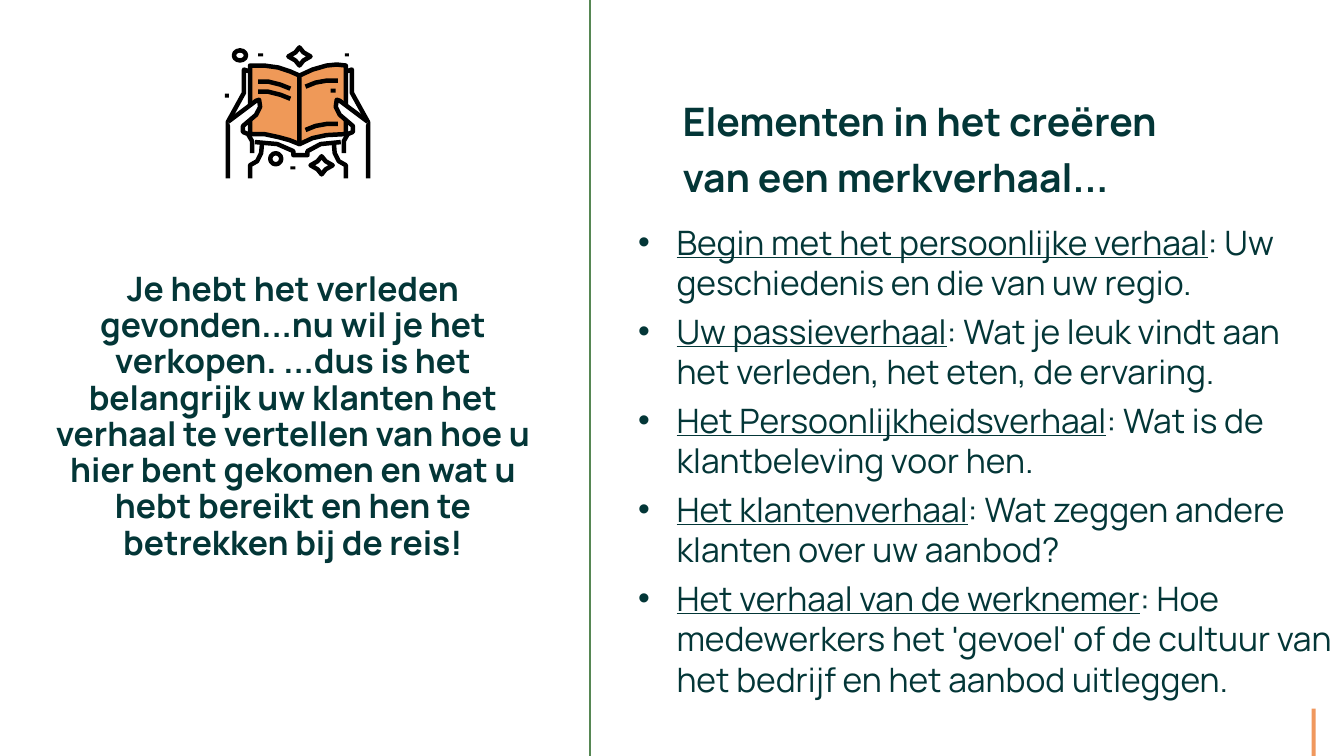
"""Build a slide on the elements of a brand story, laid out on a grid of 1333 columns by 750 rows."""
from dataclasses import dataclass
from typing import NamedTuple

from lxml import etree
from pptx import Presentation
from pptx.dml.color import RGBColor
from pptx.enum.shapes import MSO_CONNECTOR, MSO_SHAPE
from pptx.enum.text import MSO_ANCHOR, MSO_AUTO_SIZE, PP_ALIGN
from pptx.oxml.ns import qn
from pptx.util import Emu, Pt

CELL = 9144
COLS, ROWS = 1333, 750
RECT, OVAL = MSO_SHAPE.RECTANGLE, MSO_SHAPE.OVAL
STRAIGHT = MSO_CONNECTOR.STRAIGHT
TOP, NO_FIT = MSO_ANCHOR.TOP, MSO_AUTO_SIZE.NONE
LEFT, CENTER = PP_ALIGN.LEFT, PP_ALIGN.CENTER


@dataclass(frozen=True)
class Theme:
    """Hold the colours, font and sizes of the slide."""
    ink: str = "033637"
    rule: str = "568754"
    accent: str = "F0985E"
    page: str = "EF9958"
    black: str = "000000"
    white: str = "FFFFFF"
    font: str = "Manrope"
    head: int = 28
    body: int = 24
    gap: int = 6
    hair: int = 1
    pen: float = 3.2


class Box(NamedTuple):
    """Give a place in columns and rows."""
    x: float
    y: float
    w: float
    h: float


class Stroke(NamedTuple):
    """Describe one outline of the icon."""
    dots: tuple
    fill: str = ""
    shut: bool = False


class Story(NamedTuple):
    """Pair an underlined term with its text."""
    term: str
    text: str


THEME = Theme()
TITLE = "Elementen in het creëren van een merkverhaal..."
PITCH = ("Je hebt het verleden gevonden...nu wil je het verkopen. ...dus is het belangrijk "
         "uw klanten het verhaal te vertellen van hoe u hier bent gekomen en wat u hebt "
         "bereikt en hen te betrekken bij de reis!")
STORIES = (
    Story("Begin met het persoonlijke verhaal", ": Uw geschiedenis en die van uw regio."),
    Story("Uw passieverhaal", ": Wat je leuk vindt aan het verleden, het eten, de ervaring."),
    Story("Het Persoonlijkheidsverhaal", ": Wat is de klantbeleving voor hen."),
    Story("Het klantenverhaal", ": Wat zeggen andere klanten over uw aanbod?"),
    Story("Het verhaal van de werknemer", ": Hoe medewerkers het 'gevoel' of de cultuur "
          "van het bedrijf en het aanbod uitleggen."),
)

PAGES = (
    ((297, 75), (288, 71), (276, 67), (262, 65), (248, 65),
     (248, 133), (262, 133), (276, 136), (287, 139), (297, 143)),
    ((297, 75), (310, 69), (324, 65), (334, 64), (343, 65),
     (343, 133), (324, 134), (310, 137), (297, 143)),
)
SPINE = ((253, 141), (275, 143), (291, 150), (291, 154), (305, 154),
         (305, 150), (318, 143), (338, 141))
ARM = ((226, 177), (226, 121), (242, 92), (242, 69), (248, 71))
HAND = ((226, 121), (254, 100), (257, 99), (258, 106), (254, 114), (241, 125),
        (241, 131), (246, 133), (250, 140), (250, 152))
WRIST = ((248, 177), (248, 164), (255, 160), (259, 152), (260, 141))
TEXTS = (
    (((256, 81), (266, 81), (278, 84), (288, 88)), 10),
    (((303, 86), (313, 82), (324, 80), (335, 80)), 43),
)
STAR = ((-11, 0), (-4, -4), (0, -9), (4, -4), (11, 0), (4, 4), (0, 9), (-4, 4))
STARS = ((297, 56), (319, 164))
RINGS = (Box(232, 50, 12, 10), Box(268, 152, 11, 11))
SPECKS = (Box(256, 53, 5, 3), Box(328, 88, 5, 4), Box(342, 53, 4, 3),
          Box(223, 93, 4, 4), Box(288, 165, 5, 3))


def paint(shape, fill: str, line: str = "") -> None:
    """Set the fill and line of a shape, where an empty colour means none."""
    shape.shadow.inherit = False
    if fill:
        shape.fill.solid()
        shape.fill.fore_color.rgb = RGBColor.from_string(fill)
    else:
        shape.fill.background()
    if line:
        shape.line.color.rgb = RGBColor.from_string(line)
        shape.line.width = Pt(THEME.pen)
    else:
        shape.line.fill.background()


def scale(box: Box) -> list[Emu]:
    """Turn a grid box into slide lengths."""
    return [Emu(int(n * CELL)) for n in box]


def flip(dots: tuple) -> tuple:
    """Mirror points about the middle of the icon."""
    return tuple((591 - x, y) for x, y in dots)


def shift(dots: tuple, dx: int, dy: int) -> tuple:
    """Move points over the grid."""
    return tuple((x + dx, y + dy) for x, y in dots)


def draw(shapes, stroke: Stroke) -> None:
    """Draw one outline of the icon."""
    path = shapes.build_freeform(*stroke.dots[0], scale=CELL)
    path.add_line_segments(stroke.dots[1:], close=stroke.shut)
    paint(path.convert_to_shape(), stroke.fill, THEME.black)


def draw_book(shapes) -> None:
    """Draw the hands that hold an open book."""
    strokes = [Stroke(dots, THEME.page, True) for dots in PAGES]
    strokes.append(Stroke(SPINE))
    for part, fill in ((ARM, ""), (HAND, THEME.white), (WRIST, "")):
        strokes += [Stroke(part, fill), Stroke(flip(part), fill)]
    for dots, drop in TEXTS:
        strokes += [Stroke(dots), Stroke(shift(dots, 0, drop))]
    strokes += [Stroke(shift(STAR, *spot), THEME.white, True) for spot in STARS]
    for stroke in strokes:
        draw(shapes, stroke)
    for ring in RINGS:
        paint(shapes.add_shape(OVAL, *scale(ring)), "", THEME.black)
    for speck in SPECKS:
        paint(shapes.add_shape(RECT, *scale(speck)), THEME.black)


def place(holder, box: Box):
    """Move a placeholder and return its text frame."""
    holder.left, holder.top, holder.width, holder.height = scale(box)
    frame = holder.text_frame
    frame.word_wrap, frame.auto_size = True, NO_FIT
    frame.vertical_anchor = TOP
    return frame


def style(para, size: int, align, bold: bool = False, gap: int = 0, lead: float = 1.0) -> None:
    """Set the font and spacing of a paragraph."""
    para.alignment, para.line_spacing = align, lead
    para.space_before, para.space_after = Pt(gap), Pt(0)
    font = para.font
    font.name, font.size, font.bold = THEME.font, Pt(size), bold
    font.color.rgb = RGBColor.from_string(THEME.ink)


def mark(para, sign: str = "", dent: int = 0) -> None:
    """Give a paragraph a hanging bullet, or none."""
    props = para._p.get_or_add_pPr()
    props.set("marL", str(dent * CELL))
    props.set("indent", str(-dent * CELL))
    if sign:
        tint = etree.SubElement(props, qn("a:buClr"))
        etree.SubElement(tint, qn("a:srgbClr")).set("val", THEME.ink)
        etree.SubElement(props, qn("a:buChar")).set("char", sign)
    else:
        etree.SubElement(props, qn("a:buNone"))


def fill_list(frame) -> None:
    """Write the stories as a bulleted list."""
    for rank, story in enumerate(STORIES):
        para = frame.add_paragraph() if rank else frame.paragraphs[0]
        mark(para, "•", 38)
        style(para, THEME.body, LEFT, gap=THEME.gap if rank else 0)
        term = para.add_run()
        term.text, term.font.underline = story.term, True
        para.add_run().text = story.text


def main() -> None:
    """Build the slide and save it."""
    deck = Presentation()
    deck.slide_width, deck.slide_height = Emu(COLS * CELL), Emu(ROWS * CELL)
    slide = deck.slides.add_slide(deck.slide_layouts[3])
    shapes = slide.shapes
    title, pitch, items = slide.placeholders

    rule = shapes.add_connector(STRAIGHT, *scale(Box(585, 0, 585, ROWS)))
    rule.line.color.rgb = RGBColor.from_string(THEME.rule)
    rule.line.width = Pt(THEME.hair)
    etree.SubElement(rule._element.spPr, qn("a:effectLst"))
    paint(shapes.add_shape(RECT, *scale(Box(1301, 703, 4, 47))), THEME.accent)
    draw_book(shapes.add_group_shape().shapes)

    head = place(title, Box(667, 82, 564, 94))
    head.text = TITLE
    style(head.paragraphs[0], THEME.head, LEFT, bold=True, lead=1.2)
    side = place(pitch, Box(44, 265, 493, 376))
    side.text = PITCH
    mark(side.paragraphs[0])
    style(side.paragraphs[0], THEME.body, CENTER, bold=True, lead=0.9)
    fill_list(place(items, Box(623, 215, 711, 488)))
    deck.save("out.pptx")


if __name__ == "__main__":
    main()
